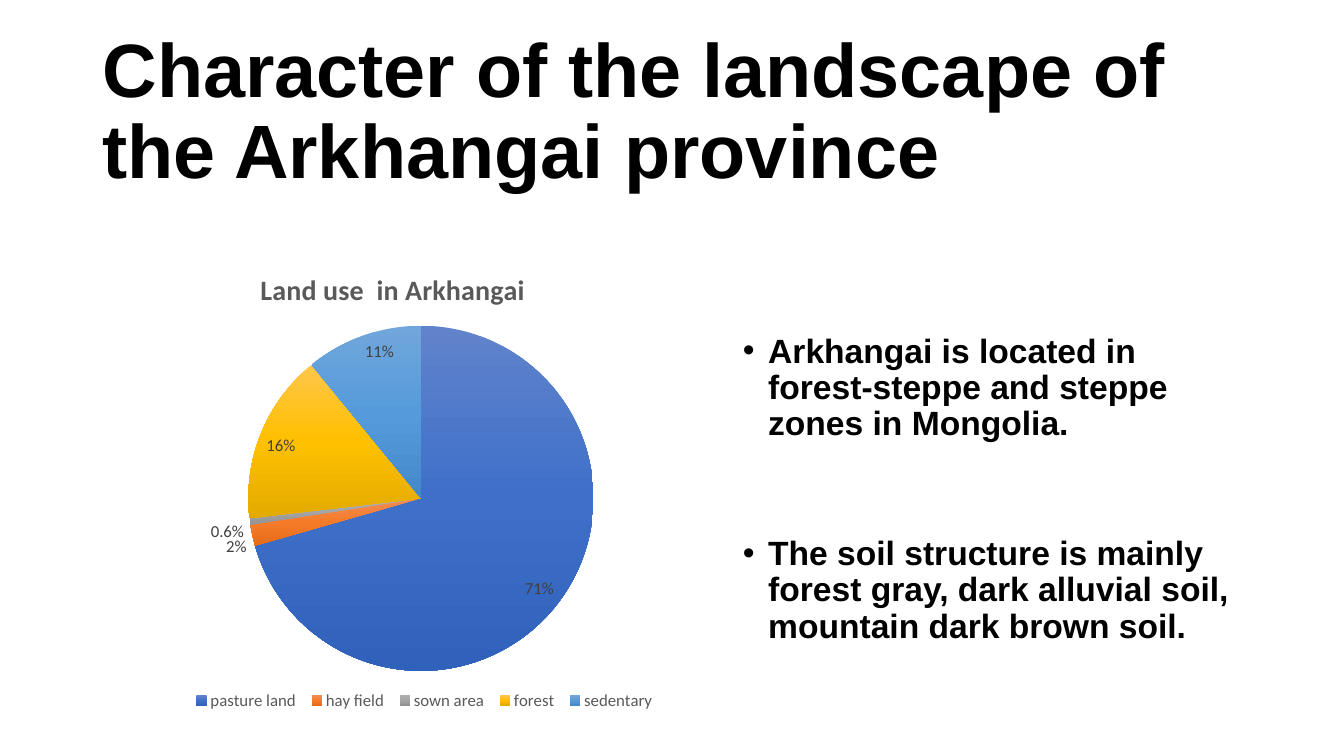
from dataclasses import dataclass

from lxml import etree
from pptx import Presentation
from pptx.chart.chart import Chart
from pptx.chart.data import CategoryChartData
from pptx.dml.color import RGBColor
from pptx.enum.chart import XL_CHART_TYPE, XL_LABEL_POSITION, XL_LEGEND_POSITION
from pptx.enum.text import MSO_ANCHOR, MSO_AUTO_SIZE, PP_ALIGN
from pptx.oxml import parse_xml
from pptx.oxml.ns import nsdecls, qn
from pptx.util import Pt

PIE = XL_CHART_TYPE.PIE
INSIDE, OUTSIDE = XL_LABEL_POSITION.INSIDE_END, XL_LABEL_POSITION.OUTSIDE_END
BOTTOM = XL_LEGEND_POSITION.BOTTOM
LEFT = PP_ALIGN.LEFT
TOP, MIDDLE = MSO_ANCHOR.TOP, MSO_ANCHOR.MIDDLE
NO_AUTOFIT = MSO_AUTO_SIZE.NONE

HEADING = "Character of the landscape of the Arkhangai province"
FACTS = [
    "Arkhangai is located in forest-steppe and steppe zones in Mongolia.",
    "The soil structure is mainly forest gray, dark alluvial soil, mountain dark brown soil.",
]
FACT_GAP = Pt(67)
BULLET_INDENT = Pt(18)


@dataclass(frozen=True)
class LandUse:
    name: str
    percent: float
    gradient: tuple[str, str, str]
    outside_label: str = ""


LAND_USES = [
    LandUse("pasture land", 71, ("6183CB", "3E70CA", "3062BB")),
    LandUse("hay field", 2, ("F18C57", "F67B28", "E56C19"), "2%"),
    LandUse("sown area", 0.6, ("AFAFAF", "A5A5A5", "939393"), "0.6%"),
    LandUse("forest", 16, ("FFC64B", "FFC000", "E3AB00")),
    LandUse("sedentary", 11, ("71A6DB", "559BDB", "448ACA")),
]


def style_font(font, name: str, size: float, color: str, bold: bool = False) -> None:
    font.name = name
    font.size = Pt(size)
    font.bold = bold
    font.color.rgb = RGBColor.from_string(color)


def place(shape, left: float, top: float, width: float, height: float) -> None:
    shape.left, shape.top = Pt(left), Pt(top)
    shape.width, shape.height = Pt(width), Pt(height)


def format_text(shape, size: float, anchor: MSO_ANCHOR) -> None:
    text_frame = shape.text_frame
    text_frame.word_wrap = True
    text_frame.auto_size = NO_AUTOFIT
    text_frame.vertical_anchor = anchor
    for paragraph in text_frame.paragraphs:
        paragraph.alignment = LEFT
        paragraph.line_spacing = 0.9
        paragraph.space_before = Pt(0)
        for run in paragraph.runs:
            style_font(run.font, "Arial", size, "000000", bold=True)


def add_bullet(paragraph) -> None:
    properties = paragraph._p.get_or_add_pPr()
    properties.set("marL", str(BULLET_INDENT))
    properties.set("indent", str(-BULLET_INDENT))
    etree.SubElement(properties, qn("a:buFont")).set("typeface", "Arial")
    etree.SubElement(properties, qn("a:buChar")).set("char", "•")


def set_layout(element, **fractions: float) -> None:
    """Fix a chart part at fractions of the chart area."""
    for layout in element.findall(qn("c:layout")):
        element.remove(layout)
    target = '<c:layoutTarget val="inner"/>' if element.tag == qn("c:plotArea") else ""
    modes = '<c:xMode val="edge"/><c:yMode val="edge"/>'
    values = "".join(f'<c:{key} val="{value}"/>' for key, value in fractions.items())
    layout = parse_xml(
        f'<c:layout {nsdecls("c")}><c:manualLayout>{target}{modes}{values}'
        "</c:manualLayout></c:layout>"
    )
    leading = (qn("c:tx"), qn("c:legendPos"))
    position = sum(child.tag in leading for child in element)
    element.insert(position, layout)


def gradient_fill(colors: tuple[str, str, str]):
    stops = "".join(
        f'<a:gs pos="{index * 50000}"><a:srgbClr val="{color}"/></a:gs>'
        for index, color in enumerate(colors)
    )
    return parse_xml(
        f'<a:gradFill {nsdecls("a")} rotWithShape="1"><a:gsLst>{stops}</a:gsLst>'
        '<a:lin ang="5400000" scaled="0"/></a:gradFill>'
    )


def format_slices(chart: Chart) -> None:
    plot = chart.plots[0]
    plot.vary_by_categories = True
    series = plot.series[0]
    labels = series.data_labels
    labels.show_percentage = True
    labels.show_value = False
    labels.number_format = "0%"
    labels.number_format_is_linked = False
    labels.position = INSIDE
    style_font(labels.font, "Calibri", 12, "404040")
    for index, use in enumerate(LAND_USES):
        point = series.points[index]
        point.format.line.fill.background()
        if use.outside_label:
            label = point.data_label
            label.text_frame.text = use.outside_label
            label.position = OUTSIDE
            style_font(label.text_frame.paragraphs[0].runs[0].font, "Calibri", 12, "404040")
    for use, properties in zip(LAND_USES, series._element.xpath("c:dPt/c:spPr")):
        properties.insert(0, gradient_fill(use.gradient))


def add_land_use_chart(slide) -> None:
    data = CategoryChartData()
    data.categories = [use.name for use in LAND_USES]
    data.add_series("Series 1", [use.percent for use in LAND_USES])
    frame = slide.shapes.add_chart(PIE, Pt(34.5), Pt(175), Pt(493), Pt(348), data)
    chart = frame.chart
    style_font(chart.font, "Calibri", 10, "000000")

    chart.has_title = True
    title_frame = chart.chart_title.text_frame
    title_frame.text = "Land use  in Arkhangai"
    style_font(title_frame.paragraphs[0].runs[0].font, "Calibri", 20, "595959", bold=True)

    chart.has_legend = True
    chart.legend.position = BOTTOM
    chart.legend.include_in_layout = False
    style_font(chart.legend.font, "Calibri", 12, "595959")

    format_slices(chart)
    chart_element = chart._chartSpace.chart
    set_layout(chart_element.find(qn("c:title")), x=0.3, y=0.04)
    set_layout(chart_element.find(qn("c:plotArea")), x=0.29, y=0.14, w=0.5, h=0.76)
    set_layout(chart_element.find(qn("c:legend")), x=0.2, y=0.91, w=0.69, h=0.05)


def main() -> None:
    presentation = Presentation()
    presentation.slide_width, presentation.slide_height = Pt(960), Pt(540)
    slide = presentation.slides.add_slide(presentation.slide_layouts[1])

    title = slide.shapes.title
    place(title, 66, 28.8, 828, 104.4)
    title.text_frame.text = HEADING
    format_text(title, 54, MIDDLE)

    body = slide.placeholders[1]
    place(body, 523.5, 235, 371, 252)
    body.text_frame.text = "\n".join(FACTS)
    format_text(body, 24, TOP)
    for index, paragraph in enumerate(body.text_frame.paragraphs):
        add_bullet(paragraph)
        if index:
            paragraph.space_before = FACT_GAP

    add_land_use_chart(slide)
    presentation.save("out.pptx")


if __name__ == "__main__":
    main()
